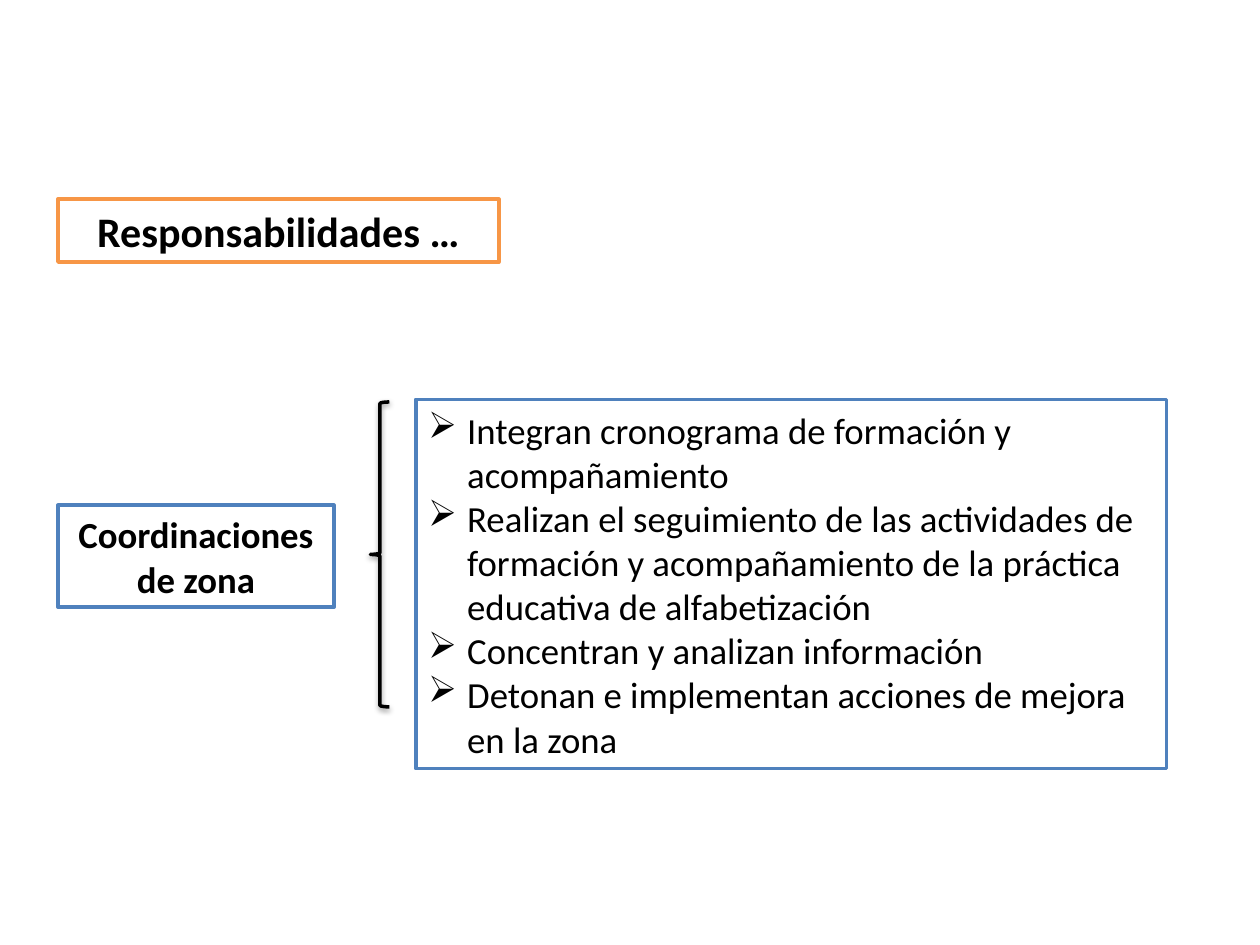
from lxml import etree
from pptx import Presentation
from pptx.dml.color import RGBColor
from pptx.enum.shapes import MSO_SHAPE
from pptx.enum.text import MSO_ANCHOR, PP_ALIGN
from pptx.oxml.ns import qn
from pptx.util import Inches, Pt

RECTANGLE, LEFT_BRACE = MSO_SHAPE.RECTANGLE, MSO_SHAPE.LEFT_BRACE
LEFT, CENTER = PP_ALIGN.LEFT, PP_ALIGN.CENTER
MIDDLE = MSO_ANCHOR.MIDDLE
FONT = "Calibri"
BLACK, WHITE, BLUE, ORANGE = "000000", "FFFFFF", "4F81BD", "F79646"
LINE_WIDTH = Pt(2)
BULLET, BULLET_INDENT = "➢", Inches(0.31)
TITLE = "Responsabilidades …"
ROLE = "Coordinaciones de zona"
DUTIES = [
    "Integran cronograma de formación y acompañamiento",
    "Realizan el seguimiento de las actividades de formación y "
    "acompañamiento de la práctica educativa de alfabetización",
    "Concentran y analizan información",
    "Detonan e implementan acciones de mejora en la zona",
]


def color(value):
    """Return the colour for a hex string."""
    return RGBColor.from_string(value)


def place(shape, box):
    """Move a shape to a box of left, top, width and height in inches."""
    shape.left, shape.top, shape.width, shape.height = map(Inches, box)


def outline(shape, line_color):
    """Give a shape a white fill and a coloured outline."""
    shape.fill.solid()
    shape.fill.fore_color.rgb = color(WHITE)
    shape.line.color.rgb = color(line_color)
    shape.line.width = LINE_WIDTH


def write(shape, texts, size, bold=False, alignment=LEFT, bulleted=False):
    """Fill a shape with one paragraph for each text."""
    frame = shape.text_frame
    frame.word_wrap = True
    frame.vertical_anchor = MIDDLE
    frame.text = "\n".join(texts)
    for paragraph in frame.paragraphs:
        paragraph.alignment = alignment
        if bulleted:
            add_bullet(paragraph)
        paragraph.font.name = FONT
        paragraph.font.size = Pt(size)
        paragraph.font.bold = bold
        paragraph.font.color.rgb = color(BLACK)


def add_bullet(paragraph):
    """Give a paragraph an arrow bullet with a hanging indent."""
    properties = paragraph._p.get_or_add_pPr()
    properties.set("marL", str(BULLET_INDENT))
    properties.set("indent", str(-BULLET_INDENT))
    etree.SubElement(properties, qn("a:buChar"), char=BULLET)


def add_title(slide, box):
    """Place the framed slide title."""
    title = slide.shapes.title
    place(title, box)
    outline(title, ORANGE)
    write(title, [TITLE], 24, bold=True, alignment=CENTER)


def add_panel(slide, box, texts, **style):
    """Add a blue framed box with text."""
    panel = slide.shapes.add_shape(RECTANGLE, *map(Inches, box))
    panel.shadow.inherit = False
    outline(panel, BLUE)
    write(panel, texts, 21, **style)


def add_brace(slide, box):
    """Add the black brace with its soft shadow."""
    brace = slide.shapes.add_shape(LEFT_BRACE, *map(Inches, box))
    brace.fill.background()
    brace.line.color.rgb = color(BLACK)
    brace.line.width = LINE_WIDTH
    brace.shadow.inherit = False
    effects = brace._element.spPr.find(qn("a:effectLst"))
    shadow = etree.SubElement(
        effects, qn("a:outerShdw"), blurRad=str(Pt(3.1)), dist=str(Pt(1.6)),
        dir="5400000", rotWithShape="0")
    shade = etree.SubElement(shadow, qn("a:srgbClr"), val=BLACK)
    etree.SubElement(shade, qn("a:alpha"), val="38000")


def main():
    """Build and save the presentation."""
    presentation = Presentation()
    presentation.slide_width = Inches(10)
    presentation.slide_height = Inches(7.5)
    slide = presentation.slides.add_slide(presentation.slide_layouts[5])
    add_title(slide, (0.46, 1.58, 3.5, 0.5))
    add_panel(slide, (0.46, 4.01, 2.19, 0.81), [ROLE], bold=True, alignment=CENTER)
    add_brace(slide, (2.94, 3.19, 0.15, 2.42))
    add_panel(slide, (3.3, 3.17, 5.96, 2.93), DUTIES, bulleted=True)
    presentation.save("out.pptx")


if __name__ == "__main__":
    main()
